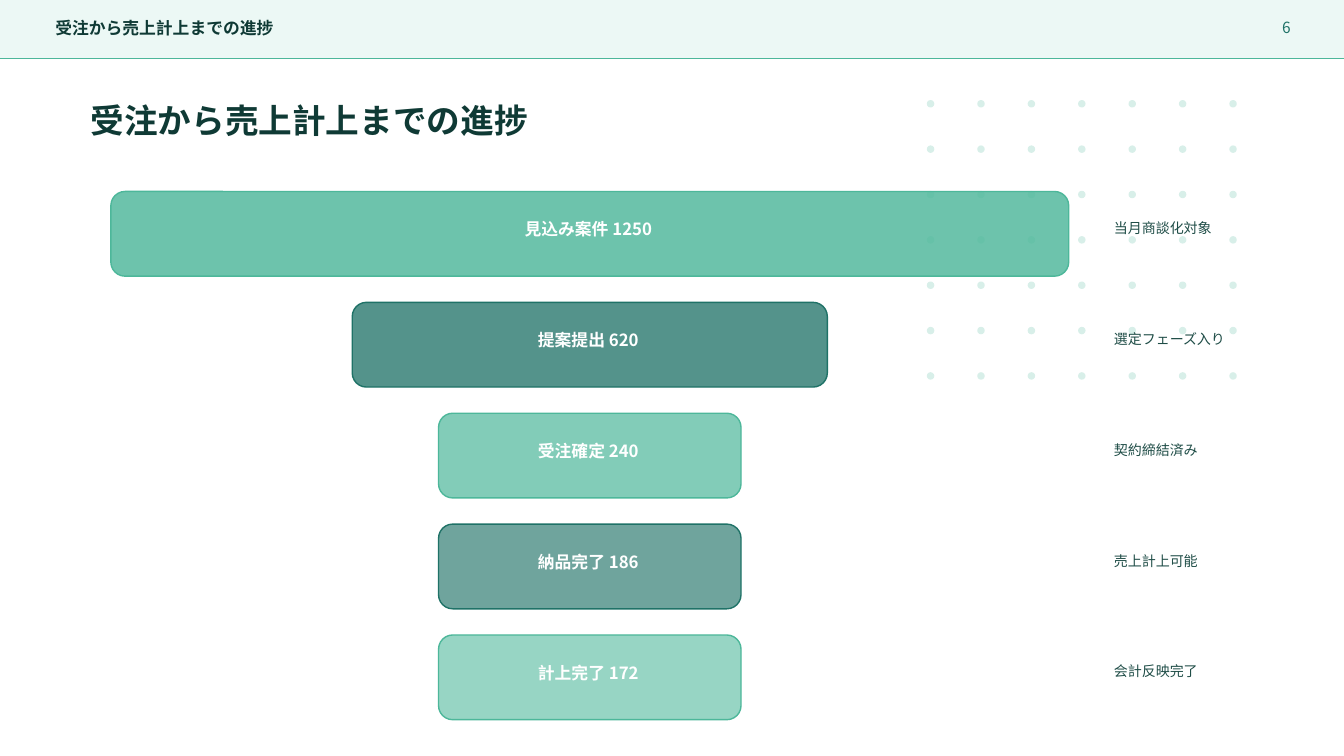
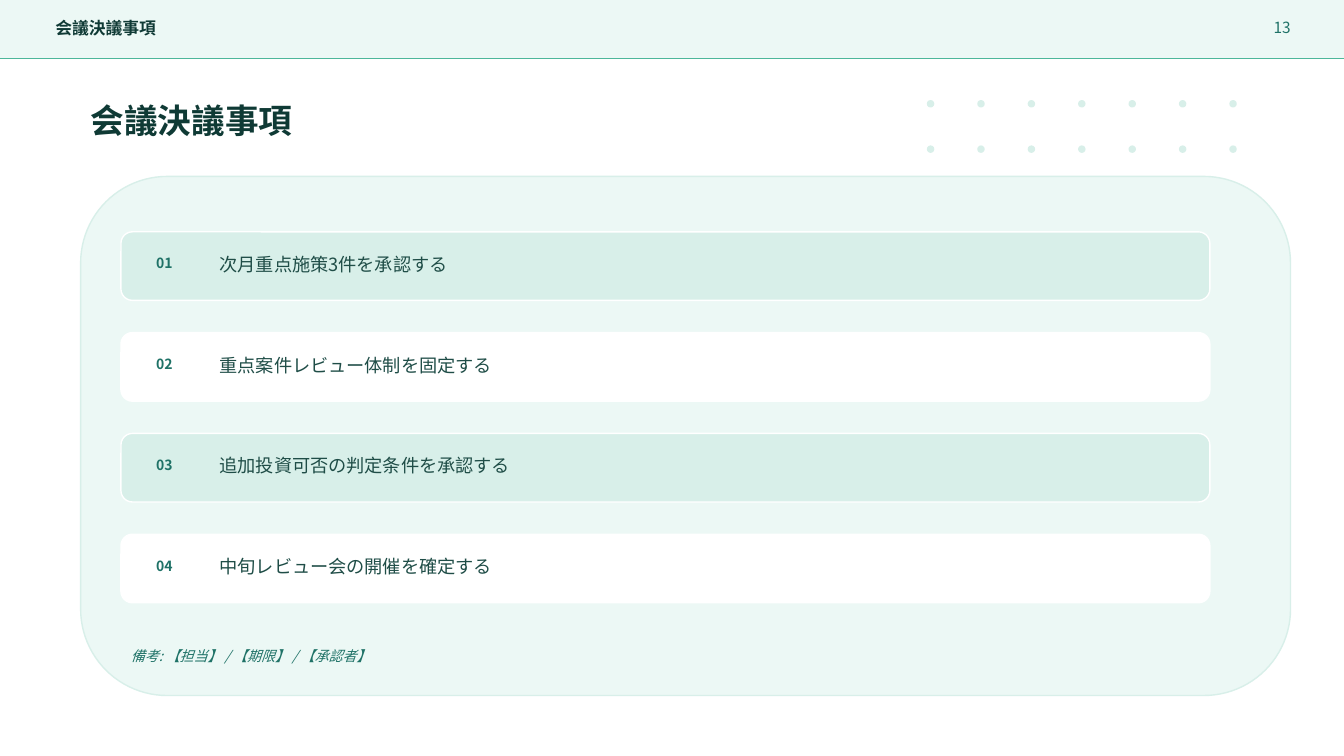
from lxml import etree
from pptx import Presentation
from pptx.dml.color import RGBColor
from pptx.enum import shapes, text
from pptx.oxml.ns import qn
from pptx.util import Inches, Pt

COLORS = {
    "ink": "0F3A35",
    "body": "1F4D47",
    "deep": "1F7267",
    "green": "4DB79A",
    "mint": "D8EFE9",
    "pale": "ECF8F5",
    "white": "FFFFFF",
}
BODY_FONT = "Noto Sans CJK JP"
TITLE_FONT = "Cabin"
SLIDE_WIDTH, SLIDE_HEIGHT = 13.33, 7.5
BAND_HEIGHT = 0.58
LABEL_GAP = " "  # one en space between a stage and its count

FUNNEL_STAGES = [
    ("見込み案件", 1250, "当月商談化対象"),
    ("提案提出", 620, "選定フェーズ入り"),
    ("受注確定", 240, "契約締結済み"),
    ("納品完了", 186, "売上計上可能"),
    ("計上完了", 172, "会計反映完了"),
]
DECISIONS = [
    "次月重点施策3件を承認する",
    "重点案件レビュー体制を固定する",
    "追加投資可否の判定条件を承認する",
    "中旬レビュー会の開催を確定する",
]


def rgb(name):
    return RGBColor.from_string(COLORS[name])


def inches(*lengths):
    return [Inches(length) for length in lengths]


def style_text(shape, content, size, color, bold=None, italic=None,
               align=text.PP_ALIGN.LEFT, font_name=BODY_FONT):
    frame = shape.text_frame
    frame.text = content
    frame.word_wrap = True
    frame.auto_size = text.MSO_AUTO_SIZE.NONE
    frame.vertical_anchor = text.MSO_ANCHOR.MIDDLE
    paragraph = frame.paragraphs[0]
    paragraph.alignment = align
    font = paragraph.font
    font.name, font.size = font_name, Pt(size)
    font.bold, font.italic = bold, italic
    font.color.rgb = rgb(color)
    latin = next(paragraph._p.iter(qn("a:latin")))
    east_asian = etree.Element(qn("a:ea"), typeface=BODY_FONT)
    latin.addnext(east_asian)


def add_text(slide, box, content, size, color, **style):
    shape = slide.shapes.add_textbox(*inches(*box))
    style_text(shape, content, size, color, **style)


def add_panel(slide, kind, box, fill, line, opacity=100):
    """Add a preset shape; opacity is the fill's percentage."""
    shape = slide.shapes.add_shape(kind, *inches(*box))
    shape.shadow.inherit = False
    shape.fill.solid()
    shape.fill.fore_color.rgb = rgb(fill)
    shape.line.color.rgb = rgb(line)
    shape.line.width = Pt(1)
    if opacity < 100:
        fill_color = next(shape.fill._xPr.iter(qn("a:srgbClr")))
        etree.SubElement(fill_color, qn("a:alpha"), val=str(opacity * 1000))


def add_dot_grid(slide, left, top, rows, columns=7):
    for row in range(rows):
        for column in range(columns):
            box = (left + 0.5 * column, top + 0.45 * row, 0.06, 0.06)
            add_panel(slide, shapes.MSO_SHAPE.OVAL, box, "mint", "mint")


def add_header_band(slide, title, number):
    add_panel(slide, shapes.MSO_SHAPE.RECTANGLE,
              (0, 0, SLIDE_WIDTH, BAND_HEIGHT), "pale", "pale")
    rule = slide.shapes.add_connector(
        shapes.MSO_CONNECTOR.STRAIGHT,
        *inches(0, BAND_HEIGHT, SLIDE_WIDTH, BAND_HEIGHT))
    rule.line.color.rgb = rgb("green")
    rule.line.width = Pt(1)
    etree.SubElement(rule._element.spPr, qn("a:effectLst"))
    add_text(slide, (0.45, 0.15, 9.3, 0.26), title, 12, "ink", bold=True)
    add_text(slide, (12.2, 0.14, 0.7, 0.26), str(number), 11, "deep",
             align=text.PP_ALIGN.RIGHT)


def add_titled_slide(presentation, title, number, dot_rows):
    slide = presentation.slides.add_slide(presentation.slide_layouts[5])
    heading = slide.shapes.title
    heading.left, heading.top, heading.width, heading.height = inches(
        0.8, 0.95, 11.4, 0.48)
    style_text(heading, title, 24, "ink", bold=True, font_name=TITLE_FONT)
    add_dot_grid(slide, 9.2, 1, dot_rows)
    add_header_band(slide, title, number)
    return slide


def add_funnel(slide, left, top, width, stages):
    """Centre one bar per stage, as wide as its share of the first."""
    bar_height, pitch, min_width = 0.84, 1.1, 3
    largest = stages[0][1]
    for index, (name, count, remark) in enumerate(stages):
        bar_width = max(min_width, width * count / largest)
        bar_left = left + (width - bar_width) / 2
        bar_top = top + pitch * index
        color = "deep" if index % 2 else "green"
        add_panel(slide, shapes.MSO_SHAPE.ROUNDED_RECTANGLE,
                  (bar_left, bar_top, bar_width, bar_height),
                  color, color, opacity=82 - 6 * index)
        add_text(slide, (bar_left + 0.16, bar_top + 0.26, bar_width - 0.35, 0.22),
                 f"{name}{LABEL_GAP}{count}", 12, "white", bold=True,
                 align=text.PP_ALIGN.CENTER)
        add_text(slide, (left + width + 0.35, bar_top + 0.24, 1.95, 0.24),
                 remark, 10, "body")


def add_decision_panel(slide, left, top, width, height, decisions, note):
    rounded = shapes.MSO_SHAPE.ROUNDED_RECTANGLE
    add_panel(slide, rounded, (left, top, width, height), "pale", "mint")
    row_left, row_width, row_height, pitch = left + 0.4, width - 1.2, 0.68, 1
    for index, decision in enumerate(decisions):
        row_top = top + 0.55 + pitch * index
        add_panel(slide, rounded, (row_left, row_top, row_width, row_height),
                  "white" if index % 2 else "mint", "white")
        add_text(slide, (row_left + 0.25, row_top + 0.21, 0.44, 0.2),
                 f"{index + 1:02}", 10, "deep", bold=True)
        add_text(slide, (row_left + 0.88, row_top + 0.2, row_width - 1.2, 0.24),
                 decision, 13, "body")
    add_text(slide, (row_left, top + height - 0.5, 6.8, 0.22),
             note, 10, "deep", italic=True)


def main():
    presentation = Presentation()
    presentation.slide_width = Inches(SLIDE_WIDTH)
    presentation.slide_height = Inches(SLIDE_HEIGHT)

    funnel_slide = add_titled_slide(
        presentation, "受注から売上計上までの進捗", 6, dot_rows=7)
    add_funnel(funnel_slide, 1.1, 1.9, 9.5, FUNNEL_STAGES)

    decision_slide = add_titled_slide(
        presentation, "会議決議事項", 13, dot_rows=2)
    add_decision_panel(decision_slide, 0.8, 1.75, 12, 5.15, DECISIONS,
                       "備考: 【担当】 / 【期限】 / 【承認者】")

    presentation.save("out.pptx")


if __name__ == "__main__":
    main()
